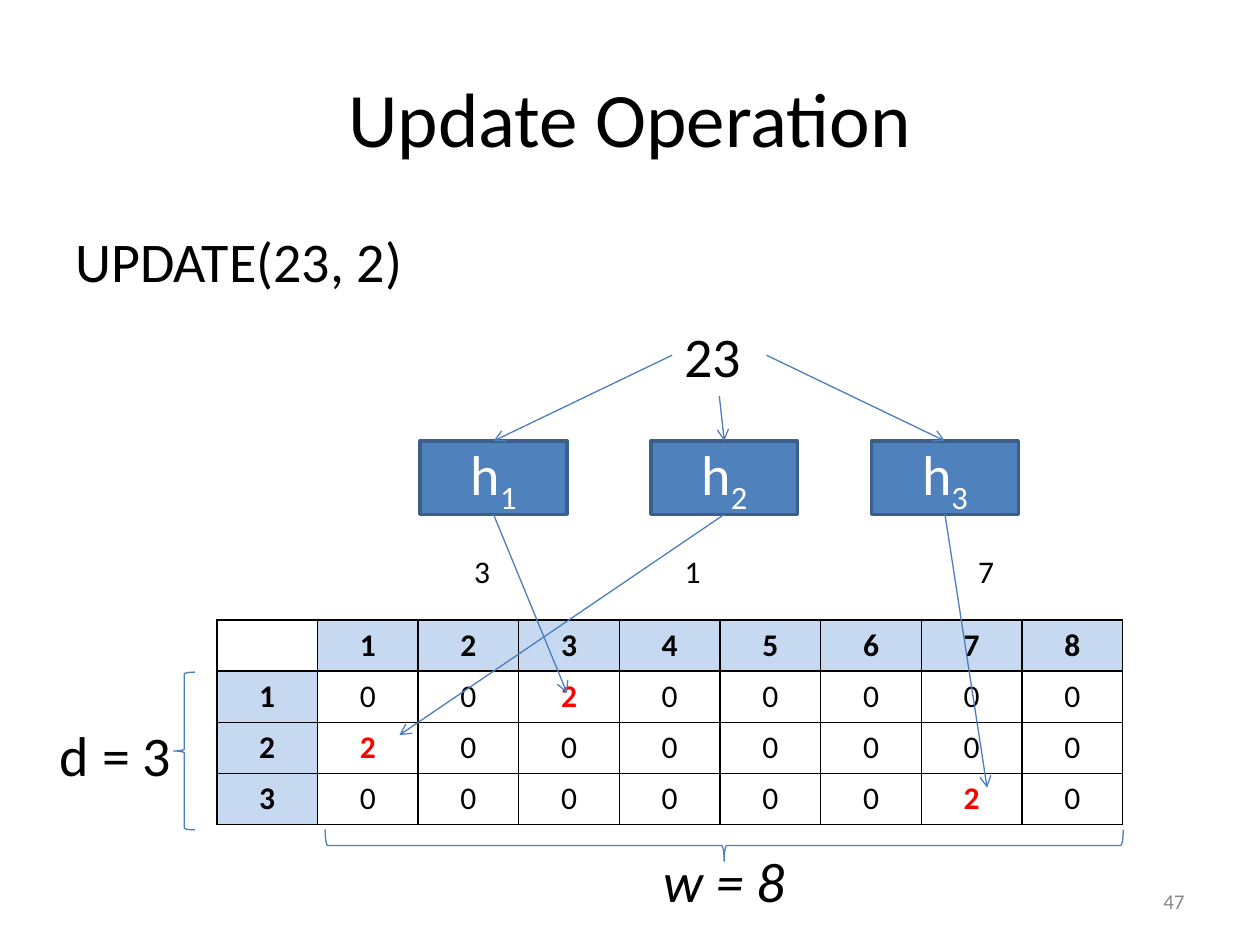
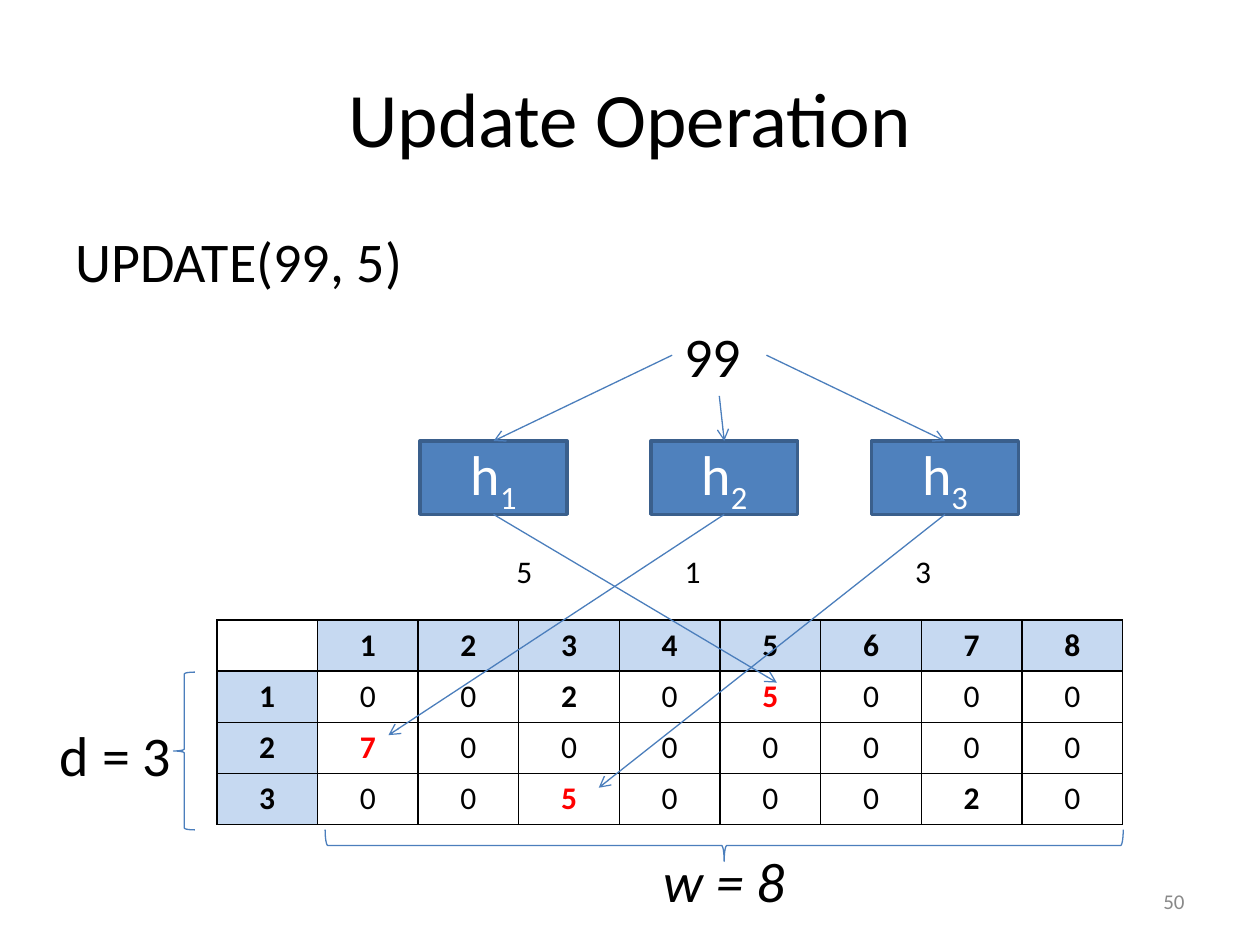
from dataclasses import dataclass

from lxml.etree import SubElement
from pptx import Presentation
from pptx.dml.color import RGBColor as Rgb
from pptx.enum.shapes import MSO_CONNECTOR as Link, MSO_SHAPE as Preset
from pptx.enum.text import MSO_ANCHOR as Anchor, PP_ALIGN as Align
from pptx.oxml.ns import qn
from pptx.util import Cm, Pt


@dataclass(frozen=True)
class Theme:
    """Colours, font and type sizes shared by all slides."""
    font: str = "Calibri"
    ink: str = "000000"
    white: str = "FFFFFF"
    muted: str = "898989"
    changed: str = "FF0000"
    header: str = "C6D9F1"
    box: str = "4F81BD"
    box_edge: str = "3A5F8C"
    stroke: str = "4B7EBC"
    title_size: int = 44
    large: int = 32
    small: int = 18
    footer: int = 12
    thin: float = 0.75
    thick: float = 2


THEME = Theme()
DEPTH, WIDTH = 3, 8
TABLE_LEFT, TABLE_TOP, COLUMN, ROW = 4.37, 12.5, 2.03, 1.03
BOX_TOP, BOX_WIDTH, BOX_HEIGHT = 8.89, 2.96, 1.48
BOX_CENTRES = (9.95, 14.6, 19.05)
KEY_EXITS = ((13.55, 7.16), (14.5, 7.98), (15.45, 7.16))
UPDATES = (
    dict(key=23, amount=2, number=47, slots=(3, 1, 7),
         label_lefts=(9.31, 13.55, 19.47),
         ends=((11.43, 13.97), (8.05, 14.82), (19.9, 15.88))),
    dict(key=99, amount=5, number=50, slots=(5, 1, 3),
         label_lefts=(10.16, 13.55, 18.2),
         ends=((15.66, 13.76), (7.83, 14.82), (12.07, 15.88))),
)


def apply_format(target, values):
    """Set every attribute named in values on target."""
    for name, value in values.items():
        setattr(target, name, value)


def write(para, text, size=THEME.large, color=THEME.ink, align=Align.LEFT, **extra):
    """Add a formatted span to a paragraph and return it."""
    para.alignment = align
    span = para.add_run()
    span.text = text
    apply_format(span.font, dict(name=THEME.font, size=Pt(size), **extra))
    span.font.color.rgb = Rgb.from_string(color)
    return span


def set_line(shape, color, width):
    """Give a shape or connector a solid line."""
    shape.line.color.rgb = Rgb.from_string(color)
    shape.line.width = Pt(width)


def add_title(page, text):
    """Place and fill the title placeholder."""
    title = page.shapes.title
    apply_format(title, dict(left=Cm(1.27), top=Cm(0.76), width=Cm(22.86), height=Cm(3.18)))
    title.text_frame.vertical_anchor = Anchor.MIDDLE
    write(title.text_frame.paragraphs[0], text, THEME.title_size, align=Align.CENTER)


def add_label(page, text, left, top, width, height, anchor=Anchor.TOP, **style):
    """Add a wrapped text box with one paragraph."""
    frame = page.shapes.add_textbox(Cm(left), Cm(top), Cm(width), Cm(height)).text_frame
    apply_format(frame, dict(word_wrap=True, vertical_anchor=anchor))
    write(frame.paragraphs[0], text, **style)


def add_hash_box(page, index, centre):
    """Add a filled box naming one hash function."""
    box = page.shapes.add_shape(Preset.RECTANGLE, Cm(centre - BOX_WIDTH / 2), Cm(BOX_TOP),
                                Cm(BOX_WIDTH), Cm(BOX_HEIGHT))
    box.shadow.inherit = False
    box.fill.solid()
    box.fill.fore_color.rgb = Rgb.from_string(THEME.box)
    set_line(box, THEME.box_edge, THEME.thick)
    box.text_frame.vertical_anchor = Anchor.MIDDLE
    para = box.text_frame.paragraphs[0]
    style = dict(color=THEME.white, align=Align.CENTER)
    write(para, "h", **style)
    subscript = write(para, str(index), **style)
    subscript.font._element.set("baseline", "-25000")


def add_brace(page, left, top, width, height, rotation=0, middle=0.5):
    """Add a mirrored right brace, turned by rotation degrees."""
    brace = page.shapes.add_shape(Preset.RIGHT_BRACE, Cm(left), Cm(top), Cm(width), Cm(height))
    brace.rotation = rotation
    brace.adjustments[1] = middle
    brace._element.spPr.find(qn("a:xfrm")).set("flipH", "1")
    brace.shadow.inherit = False
    brace.fill.background()
    set_line(brace, THEME.stroke, THEME.thin)


def add_arrow(page, start, end):
    """Add a thin straight arrow between two points."""
    arrow = page.shapes.add_connector(Link.STRAIGHT, *(Cm(value) for value in (*start, *end)))
    set_line(arrow, THEME.stroke, THEME.thin)
    SubElement(arrow.line._get_or_add_ln(), qn("a:tailEnd"), type="arrow")
    SubElement(arrow._element.spPr, qn("a:effectLst"))


def add_borders(cell):
    """Draw all four borders of a cell ahead of its fill."""
    properties = cell._tc.get_or_add_tcPr()
    for side in ("a:lnL", "a:lnR", "a:lnT", "a:lnB"):
        border = SubElement(properties, qn(side), w=str(Pt(1)))
        fill = SubElement(border, qn("a:solidFill"))
        SubElement(fill, qn("a:srgbClr"), val=THEME.ink)


def fill_cell(cell, text, is_header, is_changed):
    """Border, fill and label one table cell."""
    add_borders(cell)
    if is_header and text:
        cell.fill.solid()
        cell.fill.fore_color.rgb = Rgb.from_string(THEME.header)
    else:
        cell.fill.background()
    if text:
        write(cell.text_frame.paragraphs[0], text, THEME.small,
              THEME.changed if is_changed else THEME.ink, Align.CENTER,
              bold=is_header or text != "0")


def add_count_table(page, counts, slots):
    """Add the counter grid with this update's cells highlighted."""
    frame = page.shapes.add_table(DEPTH + 1, WIDTH + 1, Cm(TABLE_LEFT), Cm(TABLE_TOP),
                                  Cm(COLUMN * (WIDTH + 1)), Cm(ROW * (DEPTH + 1)))
    table = frame.table
    apply_format(table, dict(first_row=False, horz_banding=False))
    for column in table.columns:
        column.width = Cm(COLUMN)
    for row in table.rows:
        row.height = Cm(ROW)
    grid = [["", *range(1, WIDTH + 1)]]
    grid += [[index, *values] for index, values in enumerate(counts, 1)]
    for row, values in enumerate(grid):
        for column, value in enumerate(values):
            is_header = row == 0 or column == 0
            is_changed = not is_header and slots[row - 1] == column
            fill_cell(table.cell(row, column), str(value), is_header, is_changed)


def add_hashing(page, slots, label_lefts, ends):
    """Add hash boxes, their arrows and the slot each one yields."""
    for index, centre in enumerate(BOX_CENTRES):
        add_hash_box(page, index + 1, centre)
        add_arrow(page, KEY_EXITS[index], (centre, BOX_TOP))
        add_arrow(page, (centre, BOX_TOP + BOX_HEIGHT), ends[index])
        add_label(page, str(slots[index]), label_lefts[index], 11, 0.85, 1.02, size=THEME.small)


def add_update_page(deck, counts, key, amount, number, slots, label_lefts, ends):
    """Build the slide for one update of the counters."""
    page = deck.slides.add_slide(deck.slide_layouts[5])
    add_title(page, "Update Operation")
    add_count_table(page, counts, slots)
    add_brace(page, 3.5, 13.55, 0.43, 3.18)
    add_label(page, f"d = {DEPTH}", 0.96, 14.4, 2.96, 1.63)
    add_brace(page, 14.28, 9, 0.64, 16.09, rotation=270, middle=0.5)
    add_label(page, f"w = {WIDTH}", 13.12, 16.94, 3.18, 1.63, italic=True)
    add_label(page, f"UPDATE({key}, {amount})", 1.27, 4.45, 22.86, 1.9)
    add_label(page, str(key), 13.55, 6.35, 1.9, 1.63)
    add_hashing(page, slots, label_lefts, ends)
    add_label(page, str(number), 18.2, 17.65, 5.93, 1.02, Anchor.MIDDLE,
              size=THEME.footer, color=THEME.muted, align=Align.RIGHT)


def main():
    """Apply the updates in turn and save one slide for each."""
    deck = Presentation()
    apply_format(deck, dict(slide_width=Cm(25.4), slide_height=Cm(19.05)))
    counts = [[0] * WIDTH for _ in range(DEPTH)]
    for update in UPDATES:
        for values, slot in zip(counts, update["slots"]):
            values[slot - 1] += update["amount"]
        add_update_page(deck, counts, **update)
    deck.save("out.pptx")


if __name__ == "__main__":
    main()
